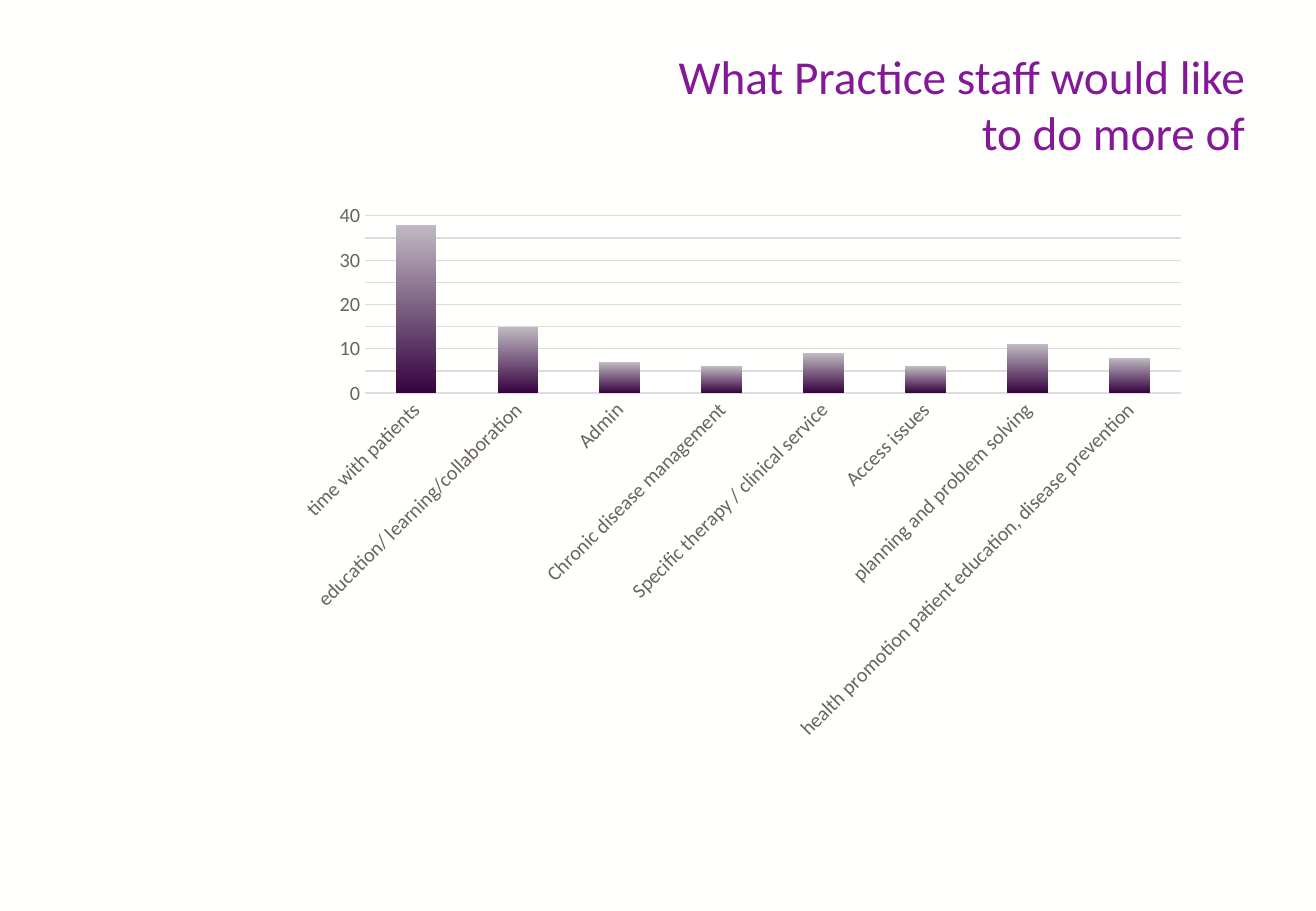
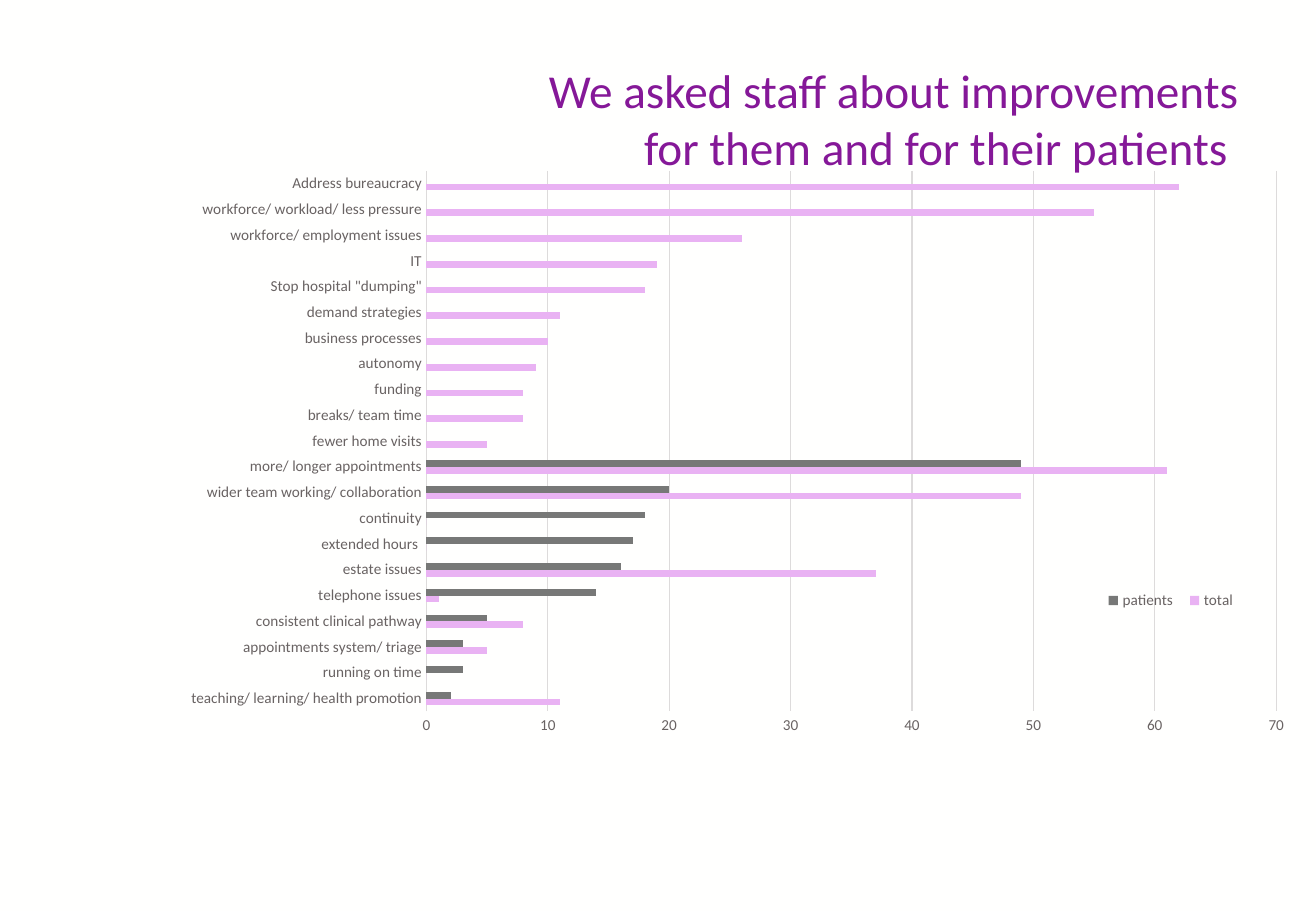
from dataclasses import dataclass
from pptx import Presentation
from pptx.chart.data import CategoryChartData as Data
from pptx.dml.color import RGBColor as RGB
from pptx.enum.chart import XL_CHART_TYPE as Kind, XL_LEGEND_POSITION as Side, XL_TICK_MARK as Tick
from pptx.enum.text import MSO_ANCHOR as Anchor, MSO_AUTO_SIZE as Fit, PP_ALIGN as Align
from pptx.oxml import parse_xml as to_xml
from pptx.oxml.ns import nsdecls
from pptx.util import Pt


@dataclass(frozen=True)
class Theme:
    face: str = "Calibri"
    back: str = "FFFFFE"
    title: str = "851898"
    text: str = "141313"
    label: str = "696363"
    rule: str = "DDDBDB"
    dark: str = "36023F"
    pale: str = "C0BAC2"
    pink: str = "E9B2F3"
    gray: str = "777877"
    head: int = 28
    base: int = 10
    large: int = 12
    small: int = 9


T = Theme()

WISHES = {
    "time with patients": 38,
    "education/ learning/collaboration": 15,
    "Admin": 7,
    "Chronic disease management": 6,
    "Specific therapy / clinical service": 9,
    "Access issues": 6,
    "planning and problem solving": 11,
    "health promotion patient education, disease prevention": 8,
}

NEEDS = {
    "teaching/ learning/ health promotion": (11, 2),
    "running on time": (0, 3),
    "appointments system/ triage": (5, 3),
    "consistent clinical pathway": (8, 5),
    "telephone issues": (1, 14),
    "estate issues": (37, 16),
    "extended hours ": (0, 17),
    "continuity": (0, 18),
    "wider team working/ collaboration": (49, 20),
    "more/ longer appointments": (61, 49),
    "fewer home visits": (5, None),
    "breaks/ team time": (8, None),
    "funding": (8, None),
    "autonomy": (9, None),
    "business processes": (10, None),
    "demand strategies": (11, None),
    'Stop hospital "dumping"': (18, None),
    "IT": (19, None),
    "workforce/ employment issues": (26, None),
    "workforce/ workload/ less pressure": (55, None),
    "Address bureaucracy": (62, None),
}


def put(item, **vals):
    for key, val in vals.items():
        setattr(item, key, val)


def style(font, size, color):
    put(font, name=T.face, size=Pt(size))
    font.color.rgb = RGB.from_string(color)


def rule(line, width):
    line.width = Pt(width)
    line.color.rgb = RGB.from_string(T.rule)


def fill(item, color):
    item.solid()
    item.fore_color.rgb = RGB.from_string(color)


def fade(item, *colors):
    item.gradient()
    item.gradient_angle = 90
    for stop, color in zip(item.gradient_stops, colors):
        stop.color.rgb = RGB.from_string(color)


def place(box, area, target=""):
    left, top, wide, high = area
    parts = {
        "x": (box[0] - left) / wide,
        "y": (box[1] - top) / high,
        "w": box[2] / wide,
        "h": box[3] / high,
    }
    modes = '<c:xMode val="edge"/><c:yMode val="edge"/>'
    sizes = "".join(f'<c:{key} val="{val:.4f}"/>' for key, val in parts.items())
    return to_xml(
        f'<c:layout {nsdecls("c")}><c:manualLayout>{target}{modes}{sizes}'
        "</c:manualLayout></c:layout>"
    )


def add_page(deck, lines, box):
    page = deck.slides.add_slide(deck.slide_layouts[5])
    title = page.shapes.title
    put(title, **dict(zip(("left", "top", "width", "height"), map(Pt, box))))
    frame = title.text_frame
    put(frame, word_wrap=True, auto_size=Fit.NONE, vertical_anchor=Anchor.MIDDLE)
    para = frame.paragraphs[0]
    para.alignment = Align.RIGHT
    for spot, line in enumerate(lines):
        if spot:
            para.add_line_break()
        run = para.add_run()
        run.text = line
        style(run.font, T.head, T.title)
    return page


def add_graph(page, kind, area, plot, cats, rows, gap, size, base, top, step):
    data = Data()
    data.categories = cats
    for name, vals in rows:
        data.add_series(name, vals)
    chart = page.shapes.add_chart(kind, *map(Pt, area), data).chart
    put(chart, has_title=False, has_legend=False)
    style(chart.font, T.base, T.text)
    put(chart.plots[0], gap_width=gap, overlap=0, vary_by_categories=False)
    cat, val = chart.category_axis, chart.value_axis
    for axis in (cat, val):
        put(axis, major_tick_mark=Tick.NONE, minor_tick_mark=Tick.NONE)
        style(axis.tick_labels.font, size, T.label)
    cat.has_major_gridlines = False
    rule(cat.format.line, base)
    put(val, has_major_gridlines=True, minimum_scale=0, maximum_scale=top, major_unit=step)
    rule(val.major_gridlines.format.line, 0.75)
    val.format.line.fill.background()
    root = chart.element.xpath("c:chart/c:plotArea")[0]
    for old in root.xpath("c:layout"):
        root.remove(old)
    root.insert(0, place(plot, area, '<c:layoutTarget val="inner"/>'))
    return chart


def add_key(chart, box, area):
    chart.has_legend = True
    key = chart.legend
    put(key, position=Side.BOTTOM, include_in_layout=False)
    style(key.font, T.small, T.label)
    root = chart.element.xpath("c:chart/c:legend")[0]
    for old in root.xpath("c:layout"):
        root.remove(old)
    root.xpath("c:legendPos")[0].addnext(place(box, area))


def wish_page(deck):
    page = add_page(
        deck, ("What Practice staff would like", "to do more of"), (242, 34.5, 503, 54)
    )
    chart = add_graph(
        page, Kind.COLUMN_CLUSTERED, (168, 118, 543.5, 327), (216.3, 128, 483.6, 105),
        list(WISHES), [("Series 1", list(WISHES.values()))],
        gap=150, size=T.large, base=1, top=40, step=5,
    )
    fade(chart.series[0].format.fill, T.dark, T.pale)
    body = chart.element.xpath("c:chart/c:plotArea/c:catAx/c:txPr/a:bodyPr")[0]
    put_rot = {"rot": "-2700000", "vert": "horz"}
    for key, val in put_rot.items():
        body.set(key, val)


def need_page(deck):
    page = add_page(
        deck,
        ("We asked staff about improvements", "for them and for their patients "),
        (100, 34, 641, 72),
    )
    area = (100, 94.3, 674.6, 370.8)
    total, folk = zip(*NEEDS.values())
    chart = add_graph(
        page, Kind.BAR_CLUSTERED, area, (252.7, 101.3, 503.7, 320.5),
        list(NEEDS), [("total", total), ("patients", folk)],
        gap=182, size=T.small, base=0.75, top=70, step=10,
    )
    for row, color in zip(chart.series, (T.pink, T.gray)):
        fill(row.format.fill, color)
    add_key(chart, (650, 346, 88, 20), area)


def main():
    deck = Presentation()
    put(deck, slide_width=Pt(780), slide_height=Pt(540))
    fill(deck.slide_master.background.fill, T.back)
    wish_page(deck)
    need_page(deck)
    deck.save("out.pptx")


if __name__ == "__main__":
    main()
